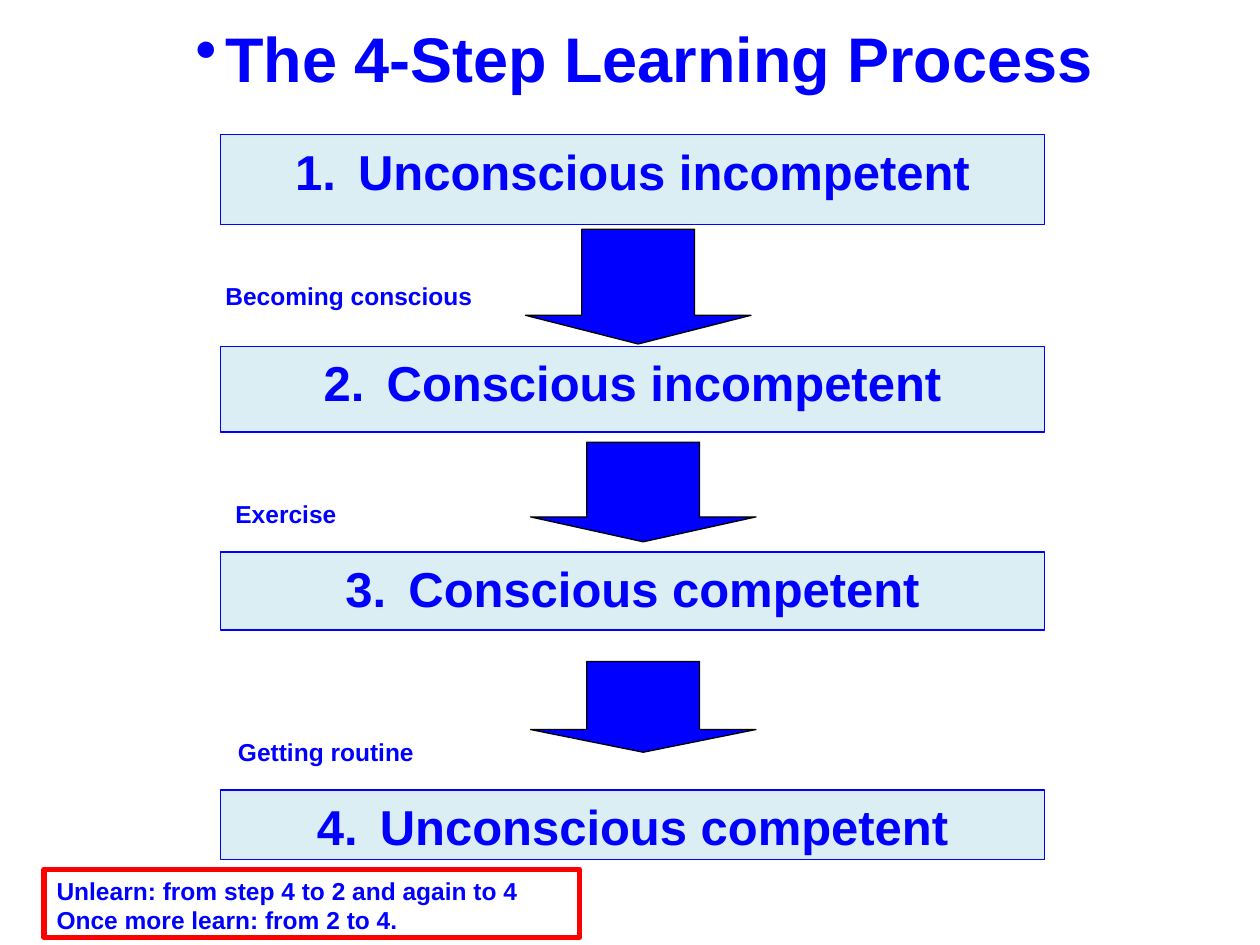
"""Build the slide on the four steps of learning."""
from lxml.etree import SubElement
from pptx import Presentation
from pptx.dml.color import RGBColor
from pptx.enum.shapes import MSO_SHAPE as Shape
from pptx.enum.text import MSO_ANCHOR as Anchor, MSO_AUTO_SIZE as AutoSize, PP_ALIGN as Align
from pptx.oxml.ns import qn
from pptx.util import Inches, Pt

BLUE, PALE, WHITE, RED, BLACK = "0000FF", "DBEEF4", "FFFFFF", "FF0000", "000000"


def paint(shape, fill, line=None, width=0.75):
    shape.shadow.inherit = False
    shape.fill.solid()
    shape.fill.fore_color.rgb = RGBColor.from_string(fill)
    if line:
        shape.line.color.rgb = RGBColor.from_string(line)
        shape.line.width = Pt(width)
    else:
        shape.line.fill.background()


def write(shape, text, size=14, align=Align.LEFT, anchor=Anchor.TOP, bullet=None, tab=None):
    frame = shape.text_frame
    frame.word_wrap = True
    frame.auto_size = AutoSize.NONE
    frame.vertical_anchor = anchor
    frame.text = text
    for paragraph in frame.paragraphs:
        paragraph.alignment = align
        font = paragraph.runs[0].font
        font.name, font.size, font.bold = "Arial", Pt(size), True
        font.color.rgb = RGBColor.from_string(BLUE)
        properties = paragraph._p.get_or_add_pPr()
        if bullet:
            SubElement(properties, qn("a:buChar"), char=bullet)
        if tab:
            stops = SubElement(properties, qn("a:tabLst"))
            SubElement(stops, qn("a:tab"), pos=str(Inches(tab)), algn="l")


deck = Presentation()
deck.slide_width, deck.slide_height = Inches(10), Inches(7.5)
slide = deck.slides.add_slide(deck.slide_layouts[5])
shapes = slide.shapes

title = shapes.title
title.left, title.top, title.width, title.height = map(Inches, (0.98, 0.1, 8.27, 0.71))
title.fill.solid()
title.fill.fore_color.rgb = RGBColor.from_string(WHITE)
write(title, "The 4-Step Learning Process", 36, Align.CENTER, Anchor.MIDDLE, bullet="•")

steps = [
    ("Unconscious incompetent", 1.07, 0.71),
    ("Conscious incompetent", 2.75, 0.68),
    ("Conscious competent", 4.38, 0.62),
    ("Unconscious competent", 6.27, 0.55),
]
for number, (name, top, height) in enumerate(steps, 1):
    step = shapes.add_shape(Shape.RECTANGLE, Inches(1.75), Inches(top), Inches(6.54), Inches(height))
    paint(step, PALE, BLUE)
    write(step, f"{number}.\t{name}", 28, Align.CENTER, tab=0.24)

for left, top, height in [(4.17, 1.82, 0.91), (4.21, 3.51, 0.79), (4.21, 5.25, 0.72)]:
    arrow = shapes.add_shape(Shape.DOWN_ARROW, Inches(left), Inches(top), Inches(1.79), Inches(height))
    arrow.adjustments[0], arrow.adjustments[1] = 0.5, 0.25
    paint(arrow, BLUE, BLACK)

transitions = [
    ("Becoming conscious", 1.69, 2.18, 2.35),
    ("Exercise", 1.77, 3.91, 1.37),
    ("Getting routine", 1.79, 5.8, 1.75),
]
for name, left, top, width in transitions:
    transition = shapes.add_shape(Shape.RECTANGLE, Inches(left), Inches(top), Inches(width), Inches(0.34))
    paint(transition, WHITE)
    write(transition, name)

relearning = shapes.add_shape(Shape.RECTANGLE, Inches(0.35), Inches(6.9), Inches(4.25), Inches(0.54))
paint(relearning, WHITE, RED, 3)
write(relearning, "Unlearn: from step 4 to 2 and again to 4\nOnce more learn: from 2 to 4.")

deck.save("out.pptx")
